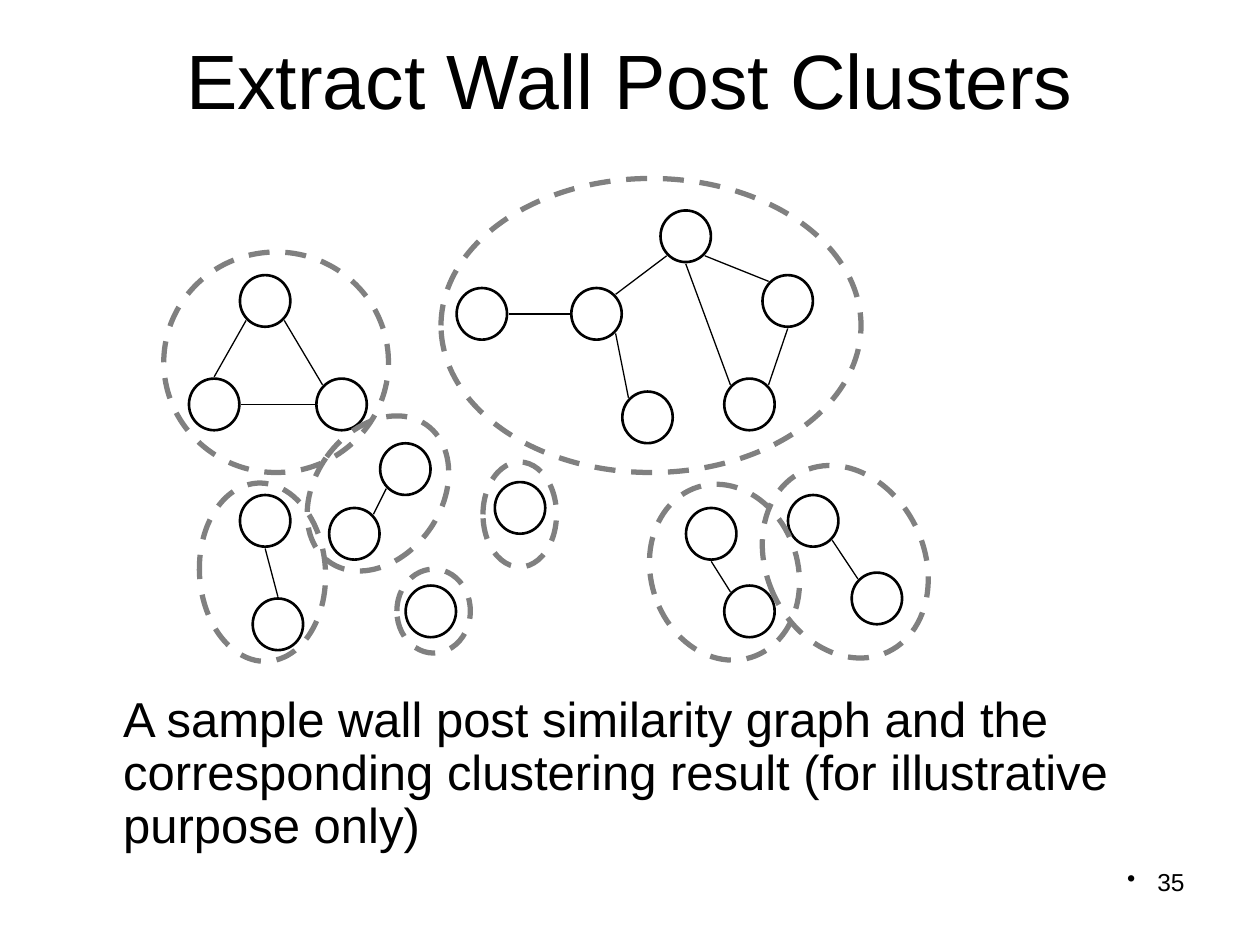
from typing import NamedTuple
from lxml.etree import SubElement
from pptx import Presentation
from pptx.dml.color import RGBColor
from pptx.enum.dml import MSO_LINE as Dash
from pptx.enum.shapes import MSO_CONNECTOR as Link, MSO_SHAPE as Kind
from pptx.enum.text import MSO_ANCHOR as Anchor, MSO_AUTO_SIZE as Fit, PP_ALIGN as Align
from pptx.oxml.ns import qn
from pptx.util import Inches, Pt

BLACK = RGBColor(0x00, 0x00, 0x00)
GRAY = RGBColor(0x80, 0x80, 0x80)
FONT = "Arial"

# Page grid: cells of 1/12 inch
CELL = 1 / 12

# Node grid: origin, steps and node size in inches
LEFT, TOP = 1.5, 1.67
COL, ROW = 5.26 / 52, 3.08 / 30
WIDE, HIGH = 0.4, 0.41
REACH = 1.07  # edges stop just outside a node's outline
DIAG = 0.5 ** 0.5
SIDES = {
    "n": (0, -1), "s": (0, 1), "w": (-1, 0), "e": (1, 0),
    "nw": (-DIAG, -DIAG), "ne": (DIAG, -DIAG),
    "sw": (-DIAG, DIAG), "se": (DIAG, DIAG),
}


class Box(NamedTuple):
    """Page cells, with an optional turn in degrees."""
    x: float
    y: float
    w: float
    h: float
    turn: float = 0


class Node(NamedTuple):
    """Column and row on the node grid."""
    col: int
    row: int


class Edge(NamedTuple):
    """Two nodes and the side of each that the line meets."""
    start: str
    out: str
    end: str
    into: str


NODES = {
    # triangle
    "a": Node(4, 5), "b": Node(0, 13), "c": Node(10, 13),
    # pairs on the left
    "d": Node(4, 22), "e": Node(5, 30), "f": Node(15, 18), "g": Node(11, 23),
    # large cluster
    "h": Node(21, 6), "i": Node(30, 6), "j": Node(37, 0),
    "k": Node(45, 5), "l": Node(42, 13), "m": Node(34, 14),
    # pairs on the right
    "n": Node(39, 23), "o": Node(42, 29), "p": Node(47, 22), "q": Node(52, 28),
    # single posts
    "r": Node(24, 21), "s": Node(17, 29),
}

EDGES = [
    Edge("a", "sw", "b", "n"), Edge("a", "se", "c", "nw"), Edge("b", "e", "c", "w"),
    Edge("d", "s", "e", "n"), Edge("f", "sw", "g", "ne"),
    Edge("h", "e", "i", "w"), Edge("i", "ne", "j", "sw"), Edge("j", "se", "k", "nw"),
    Edge("j", "s", "l", "nw"), Edge("i", "se", "m", "nw"), Edge("k", "s", "l", "ne"),
    Edge("n", "s", "o", "nw"), Edge("p", "se", "q", "nw"),
]

CLUSTERS = [
    Box(42, 17, 40, 28),
    Box(62, 46, 14, 17, 342.6),
    Box(73, 44, 15, 19, 334.8),
    Box(15.6, 24, 21.4, 21),
    Box(19, 46, 12, 17, 356.7),
    Box(30, 39, 12, 16, 35.5),
    Box(46, 44, 7, 10),
    Box(37.8, 54.2, 7, 8),
]


def place(box: Box) -> list:
    return [Inches(n * CELL) for n in box[:4]]


def write(shape, text: str, *, size: float, align=Align.LEFT, anchor=Anchor.TOP,
          space: float = 1, margin: float = 0, bullet: bool = False) -> None:
    frame = shape.text_frame
    frame.word_wrap = True
    frame.auto_size = Fit.NONE
    frame.vertical_anchor = anchor
    para = frame.paragraphs[0]
    para.text = text
    para.alignment = align
    para.line_spacing = space
    para.space_before = Pt(0)
    props = para._p.get_or_add_pPr()
    props.set("marL", str(Inches(margin)))
    if bullet:
        props.set("indent", str(-Inches(margin)))
        SubElement(props, qn("a:buChar"), char="•")
    font = para.runs[0].font
    font.name, font.size = FONT, Pt(size)
    font.color.rgb = BLACK


def ring(shapes, place: list, color: RGBColor, width: float):
    oval = shapes.add_shape(Kind.OVAL, *place)
    oval.shadow.inherit = False
    oval.fill.background()
    oval.line.color.rgb = color
    oval.line.width = Pt(width)
    return oval


def draw_node(shapes, node: Node) -> None:
    spot = (LEFT + node.col * COL, TOP + node.row * ROW, WIDE, HIGH)
    ring(shapes, [Inches(n) for n in spot], BLACK, 1.5)


def meet(node: Node, side: str) -> tuple:
    dx, dy = SIDES[side]
    x = LEFT + node.col * COL + WIDE / 2 * (1 + REACH * dx)
    y = TOP + node.row * ROW + HIGH / 2 * (1 + REACH * dy)
    return Inches(x), Inches(y)


def draw_edge(shapes, edge: Edge) -> None:
    line = shapes.add_connector(Link.STRAIGHT, *meet(NODES[edge.start], edge.out),
                                *meet(NODES[edge.end], edge.into))
    line.line.color.rgb = BLACK
    line.line.width = Pt(0.75)
    SubElement(line._element.spPr, qn("a:effectLst"))


def draw_cluster(shapes, box: Box) -> None:
    oval = ring(shapes, place(box), GRAY, 3)
    oval.line.dash_style = Dash.DASH
    oval.rotation = box.turn


def main() -> None:
    deck = Presentation()
    deck.slide_width, deck.slide_height = Inches(10), Inches(7.5)
    slide = deck.slides.add_slide(deck.slide_layouts[5])
    shapes = slide.shapes

    # Title, caption and page number
    title = shapes.title
    title.left, title.top, title.width, title.height = place(Box(6, 0, 108, 15))
    write(title, "Extract Wall Post Clusters", size=44,
          align=Align.CENTER, anchor=Anchor.MIDDLE)
    note = shapes.add_textbox(*place(Box(6, 65.6, 108, 16.4)))
    write(note, "A sample wall post similarity graph and the corresponding "
          "clustering result (for illustrative purpose only)",
          size=28, space=0.9, margin=0.38)
    page = shapes.add_textbox(*place(Box(86, 82, 28, 6.2)))
    write(page, "35", size=14, align=Align.RIGHT, margin=0.24, bullet=True)

    # Graph
    for node in NODES.values():
        draw_node(shapes, node)
    for edge in EDGES:
        draw_edge(shapes, edge)

    # Cluster outlines
    for box in CLUSTERS:
        draw_cluster(shapes, box)

    deck.save("out.pptx")


if __name__ == "__main__":
    main()
